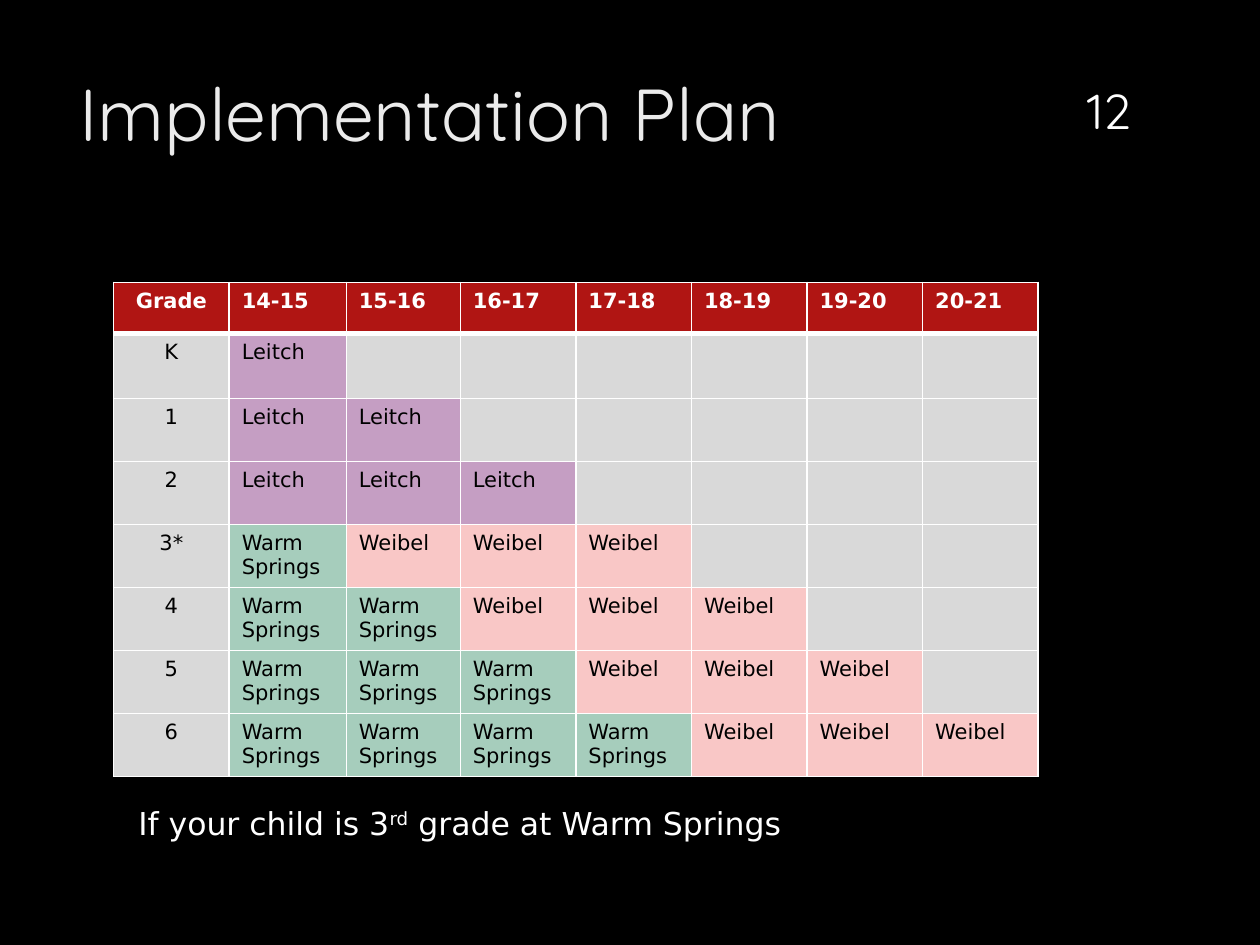
from lxml.etree import SubElement
from pptx import Presentation
from pptx.dml.color import RGBColor
from pptx.enum.text import MSO_ANCHOR, PP_ALIGN
from pptx.oxml.ns import qn
from pptx.util import Cm, Pt


def add_run(p, text, size, color, font="DejaVu Sans", bold=False):
    r = p.add_run()
    r.text = text
    r.font.size = Pt(size)
    r.font.name = font
    r.font.bold = bold
    r.font.color.rgb = RGBColor.from_string(color)
    return r


def style_cell(cell, fill, bottom=1):
    """Fill the cell and give it white borders, the bottom one in the given points."""
    tcPr = cell._tc.get_or_add_tcPr()
    for side in ("lnL", "lnR", "lnT", "lnB"):
        width = bottom if side == "lnB" else 1
        ln = SubElement(tcPr, qn(f"a:{side}"), w=str(Pt(width)))
        solid = SubElement(ln, qn("a:solidFill"))
        SubElement(solid, qn("a:srgbClr"), val="FFFFFF")
    cell.fill.solid()
    cell.fill.fore_color.rgb = RGBColor.from_string(fill)


prs = Presentation()
prs.slide_width, prs.slide_height = Cm(25.4), Cm(19.05)
s = prs.slides.add_slide(prs.slide_layouts[6])
s.background.fill.solid()
s.background.fill.fore_color.rgb = RGBColor.from_string("000000")

# Title
tf = s.shapes.add_textbox(Cm(1.35), Cm(1.24), Cm(19.6), Cm(3.9)).text_frame
tf.word_wrap = True
add_run(tf.paragraphs[0], "Implementation Plan", 42, "EBEBEB", "Quicksand")

# Table: each grade lists its school year by year, until the pupils leave grade 6
years = ["14-15", "15-16", "16-17", "17-18", "18-19", "19-20", "20-21"]
grades = ["K", "1", "2", "3*", "4", "5", "6"]
fills = {"Leitch": "C59EC3", "Warm Springs": "A6CDBC", "Weibel": "F9C7C6", "": "D9D9D9"}

rows = [["Grade"] + years]
for i, grade in enumerate(grades):
    if i < 3:
        schools = ["Leitch"] * (i + 1)
    else:
        schools = ["Warm Springs"] * (i - 2) + ["Weibel"] * 3
    rows.append([grade] + schools + [""] * (len(years) - len(schools)))

table = s.shapes.add_table(len(rows), len(rows[0]), Cm(2.29), Cm(5.69),
                           Cm(18.65), Cm(9.98)).table
for col, width in zip(table.columns, [2.33, 2.36, 2.3] + [2.33] * 5):
    col.width = Cm(width)
for row, height in zip(table.rows, [1.03, 1.31] + [1.27] * 6):
    row.height = Cm(height)

for i, texts in enumerate(rows):
    for j, text in enumerate(texts):
        cell = table.cell(i, j)
        header = i == 0
        if header:
            style_cell(cell, "B01513", bottom=3)
        else:
            style_cell(cell, fills[text if j else ""])
        p = cell.text_frame.paragraphs[0]
        if j == 0:
            p.alignment = PP_ALIGN.CENTER
        if text:
            add_run(p, text, 12, "FFFFFF" if header else "000000", bold=header)

# Slide number
tf = s.shapes.add_textbox(Cm(21.39), Cm(0.81), Cm(1.93), Cm(2.13)).text_frame
tf.word_wrap = True
tf.vertical_anchor = MSO_ANCHOR.BOTTOM
p = tf.paragraphs[0]
p.alignment = PP_ALIGN.CENTER
add_run(p, "12", 28, "FFFFFF", "Quicksand")

# Footnote
tf = s.shapes.add_textbox(Cm(2.54), Cm(16.08), Cm(14.4), Cm(1.02)).text_frame
tf.word_wrap = True
p = tf.paragraphs[0]
add_run(p, "If your child is 3", 18, "FFFFFF")
r = add_run(p, "rd", 18, "FFFFFF")
r.font._element.set("baseline", "30000")
add_run(p, " grade at Warm Springs", 18, "FFFFFF")

prs.save("out.pptx")
